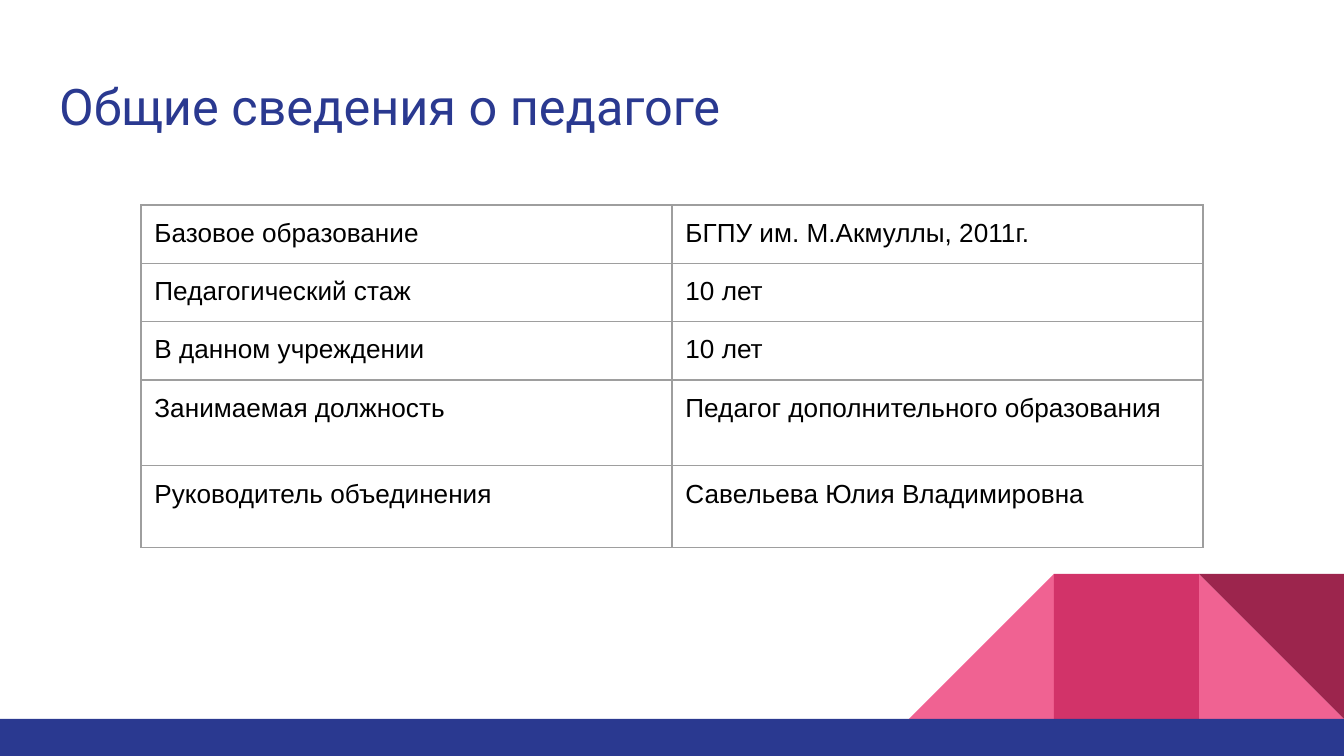
from lxml import etree
from pptx import Presentation, util as u
from pptx.dml.color import RGBColor
from pptx.enum import shapes, text
from pptx.oxml.ns import qn

NAVY = RGBColor(0x2A, 0x39, 0x90)
PINK = RGBColor(0xF0, 0x62, 0x92)
CRIMSON = RGBColor(0xD2, 0x33, 0x69)
MAROON = RGBColor(0x9C, 0x25, 0x4D)
BLACK = RGBColor(0, 0, 0)
GREY = RGBColor(0x9E, 0x9E, 0x9E)
WIDTH, HEIGHT = 1344, 756


def px(length):
    return u.Emu(round(length * u.Inches(10) / WIDTH))


def add_run(para, words, font, size, color):
    span = para.add_run()
    span.text = words
    span.font.name = font
    span.font.size = u.Pt(size)
    span.font.color.rgb = color


deck = Presentation()
deck.slide_width, deck.slide_height = px(WIDTH), px(HEIGHT)
page = deck.slides.add_slide(deck.slide_layouts[6])

# Corner ornament of square tiles standing on the footer band
TILE, FOOTER_TOP = 145, 719
RECT = shapes.MSO_SHAPE.RECTANGLE
TRIANGLE = shapes.MSO_SHAPE.RIGHT_TRIANGLE
tile_top = FOOTER_TOP - TILE
ornament = [
    (TRIANGLE, WIDTH - TILE, tile_top, TILE, TILE, 0, PINK),
    (TRIANGLE, WIDTH - 3 * TILE, tile_top, TILE, TILE, 270, PINK),
    (RECT, WIDTH - 2 * TILE, tile_top, TILE, TILE, 0, CRIMSON),
    (TRIANGLE, WIDTH - TILE, tile_top, TILE, TILE, 180, MAROON),
    (RECT, 0, FOOTER_TOP, WIDTH, HEIGHT - FOOTER_TOP, 0, NAVY),
]
for kind, left, top, width, height, angle, color in ornament:
    shape = page.shapes.add_shape(kind, px(left), px(top), px(width), px(height))
    shape.rotation = angle
    shape.shadow.inherit = False
    shape.fill.solid()
    shape.fill.fore_color.rgb = color
    shape.line.fill.background()

# Title
box = page.shapes.add_textbox(px(46), px(61), px(1253), px(88))
frame = box.text_frame
frame.word_wrap = True
frame.vertical_anchor = text.MSO_ANCHOR.MIDDLE
frame.margin_left = frame.margin_right = u.Inches(0.1)
frame.margin_top = frame.margin_bottom = u.Inches(0.1)
add_run(frame.paragraphs[0], "Общие сведения о педагоге", "Roboto", 27, NAVY)

# Table
facts = [
    (56, "Базовое образование", "БГПУ им. М.Акмуллы, 2011г."),
    (56, "Педагогический стаж", "10 лет"),
    (56, "В данном учреждении", "10 лет"),
    (86, "Занимаемая должность", "Педагог дополнительного образования"),
    (82, "Руководитель объединения", "Савельева Юлия Владимировна"),
]
COLUMN = 531
table_height = sum(fact[0] for fact in facts)
table = page.shapes.add_table(len(facts), 2, px(141), px(205),
                              px(2 * COLUMN), px(table_height)).table
table.first_row = table.horz_banding = False
for column in table.columns:
    column.width = px(COLUMN)
for row, (height, *entries) in zip(table.rows, facts):
    row.height = px(height)
    for cell, entry in zip(row.cells, entries):
        cell.margin_left = cell.margin_right = u.Inches(0.1)
        cell.margin_top = cell.margin_bottom = u.Inches(0.1)
        add_run(cell.text_frame.paragraphs[0], entry, "Arial", 14, BLACK)
        cell.fill.background()
        properties = cell._tc.get_or_add_tcPr()
        for position, side in enumerate(("a:lnL", "a:lnR", "a:lnT", "a:lnB")):
            border = etree.Element(qn(side), w=str(u.Pt(0.75)))
            fill = etree.SubElement(border, qn("a:solidFill"))
            etree.SubElement(fill, qn("a:srgbClr"), val=str(GREY))
            properties.insert(position, border)

deck.save("out.pptx")
